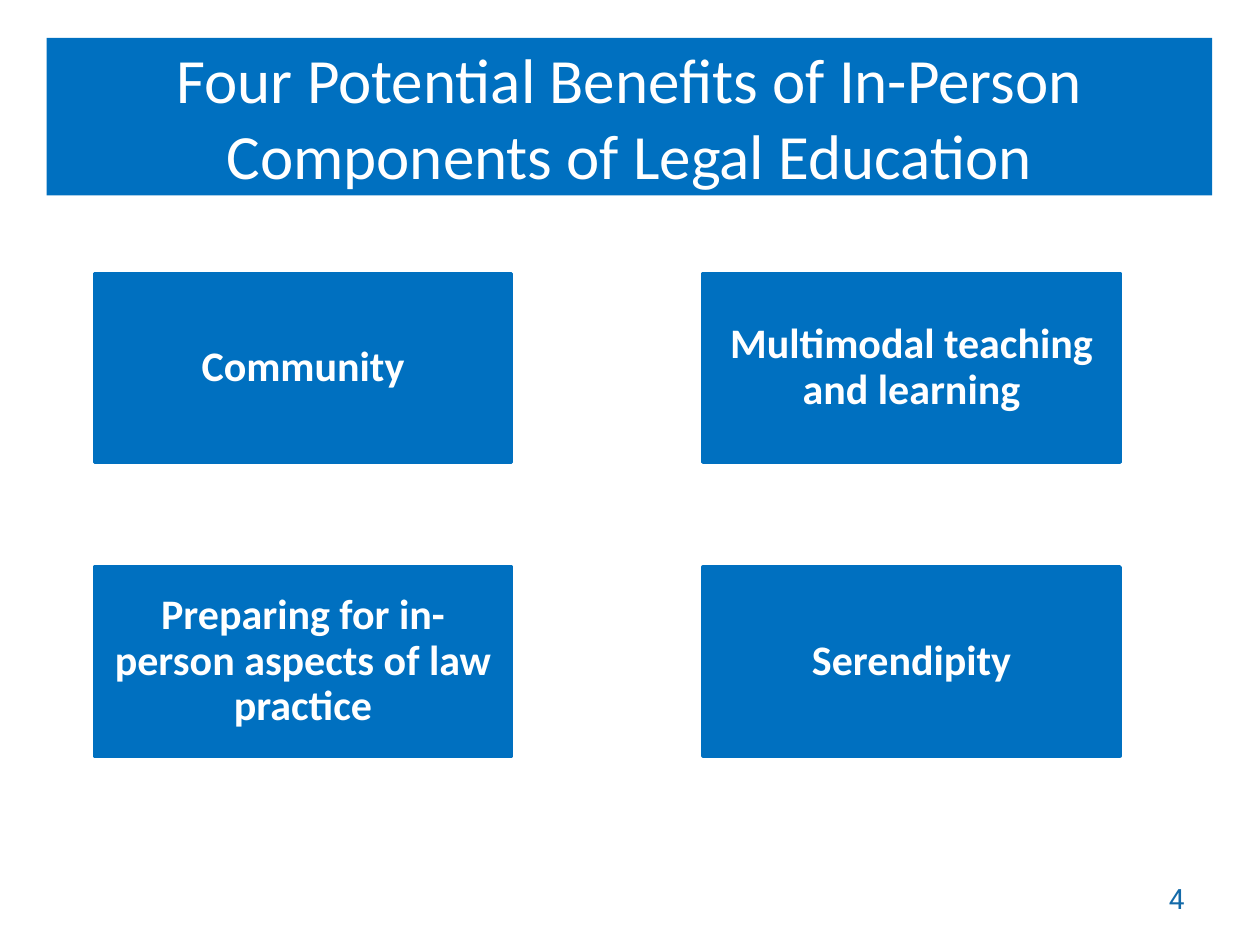
import pptx
import pptx.util
import pptx.dml.color
import pptx.enum.shapes
import pptx.enum.text

Inches = pptx.util.Inches
Align = pptx.enum.text.PP_ALIGN
Anchor = pptx.enum.text.MSO_ANCHOR

# Content
TITLE = "Four Potential Benefits of In-Person Components of Legal Education"
CARDS = [
    "Community",
    "Multimodal teaching and learning",
    "Preparing for in-person aspects of law practice",
    "Serendipity",
]
PAGE = "4"

# Theme
THEME = {
    "blue": "0070C0", "white": "FFFFFF", "page": "136AA9",
    "font": "Calibri", "page_font": "Roboto",
    "title_size": 36, "card_size": 24, "page_size": 16, "line": 2,
}

# Card grid
COLS = 2
LEFT, TOP = 0.75, 2.17
WIDE, HIGH = 3.31, 1.5
STEP_X, STEP_Y = 4.83, 2.33


def color(name):
    return pptx.dml.color.RGBColor.from_string(THEME[name])


def write(shape, text, size, ink="white", font="font", align=Align.CENTER,
          anchor=Anchor.MIDDLE, bold=False):
    frame = shape.text_frame
    frame.text = text
    frame.word_wrap = True
    frame.vertical_anchor = anchor
    para = frame.paragraphs[0]
    para.alignment = align
    face = para.runs[0].font
    face.name = THEME[font]
    face.size = pptx.util.Pt(THEME[size])
    face.bold = bold
    face.color.rgb = color(ink)
    return frame


def block(slide, left, top, width, height):
    shape = slide.shapes.add_shape(
        pptx.enum.shapes.MSO_SHAPE.RECTANGLE,
        Inches(left), Inches(top), Inches(width), Inches(height))
    shape.shadow.inherit = False
    shape.fill.solid()
    shape.fill.fore_color.rgb = color("blue")
    shape.line.fill.background()
    return shape


def main():
    deck = pptx.Presentation()
    deck.slide_width, deck.slide_height = Inches(10), Inches(7.5)
    slide = deck.slides.add_slide(deck.slide_layouts[6])

    # Title band
    write(block(slide, 0.37, 0.3, 9.25, 1.25), TITLE, "title_size")

    # Page number
    box = slide.shapes.add_textbox(
        Inches(7.17), Inches(6.95), Inches(2.33), Inches(0.4))
    write(box, PAGE, "page_size", "page", "page_font", Align.RIGHT, Anchor.TOP)

    # Benefit cards
    for i, text in enumerate(CARDS):
        row, col = divmod(i, COLS)
        card = block(slide, LEFT + col * STEP_X, TOP + row * STEP_Y, WIDE, HIGH)
        card.line.color.rgb = color("blue")
        card.line.width = pptx.util.Pt(THEME["line"])
        frame = write(card, text, "card_size", bold=True)
        frame.margin_left = frame.margin_right = Inches(0.1)
        frame.margin_top = frame.margin_bottom = Inches(0.1)
        frame.paragraphs[0].line_spacing = 0.9

    deck.save("out.pptx")


if __name__ == "__main__":
    main()
